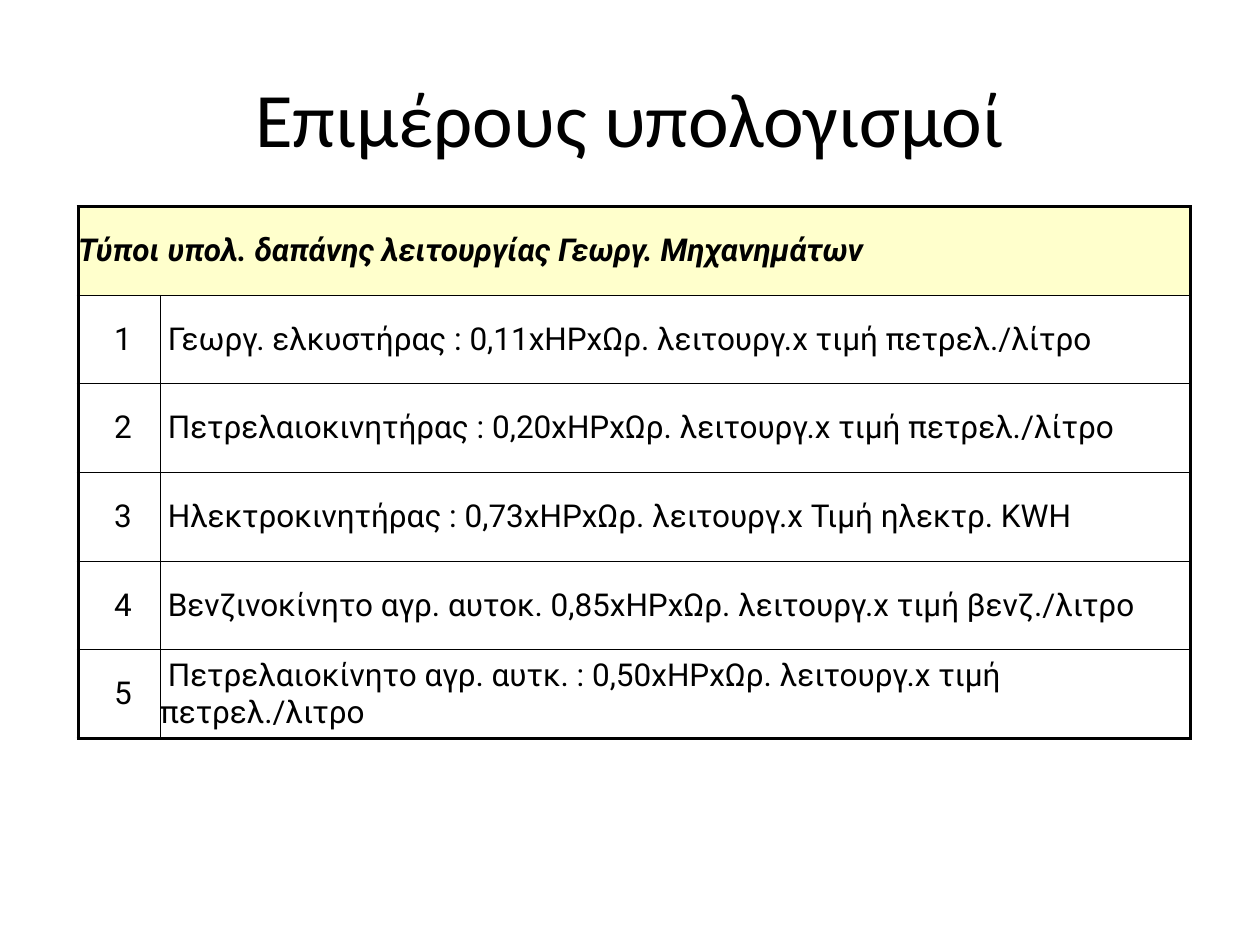
from lxml.etree import SubElement
from pptx import Presentation
from pptx.dml.color import RGBColor
from pptx.enum.text import MSO_ANCHOR as ANCHOR, PP_ALIGN as ALIGN
from pptx.oxml.ns import qn
from pptx.util import Inches, Pt

COLORS = {"black": "000000", "header": "FFFFCC"}
THICK, THIN = Pt(2), Pt(0.5)
HEADER = "Τύποι υπολ. δαπάνης λειτουργίας Γεωργ. Μηχανημάτων"
FORMULAS = [
    "Γεωργ. ελκυστήρας : 0,11xHPxΩρ. λειτουργ.x τιμή πετρελ./λίτρο",
    "Πετρελαιοκινητήρας : 0,20xHPxΩρ. λειτουργ.x τιμή πετρελ./λίτρο",
    "Ηλεκτροκινητήρας : 0,73xHPxΩρ. λειτουργ.x Τιμή ηλεκτρ. KWH",
    "Βενζινοκίνητο αγρ. αυτοκ. 0,85xHPxΩρ. λειτουργ.x τιμή βενζ./λιτρο",
    "Πετρελαιοκίνητο αγρ. αυτκ. : 0,50xHPxΩρ. λειτουργ.x τιμή πετρελ./λιτρο",
]


def set_text(p, text, font, size, align, bold=False, italic=False):
    p.text, p.alignment = text, align
    p.font.name, p.font.size = font, Pt(size)
    p.font.bold, p.font.italic = bold, italic
    p.font.color.rgb = RGBColor.from_string(COLORS["black"])


def set_border(cell, side, width):
    ln = SubElement(cell._tc.get_or_add_tcPr(), qn(f"a:ln{side}"), w=str(width))
    fill = SubElement(ln, qn("a:solidFill"))
    SubElement(fill, qn("a:srgbClr"), val=COLORS["black"])


prs = Presentation()
prs.slide_width, prs.slide_height = Inches(10), Inches(7.5)
s = prs.slides.add_slide(prs.slide_layouts[6])

# Title
sp = s.shapes.add_textbox(Inches(0.5), Inches(0.3), Inches(9), Inches(1.25))
tf = sp.text_frame
tf.word_wrap = True
tf.vertical_anchor = ANCHOR.MIDDLE
set_text(tf.paragraphs[0], "Επιμέρους υπολογισμοί", "Calibri", 44, ALIGN.CENTER)

# Table: a merged header above numbered formulas
rows = [(HEADER, "")] + [(f" {n}", f" {text}") for n, text in enumerate(FORMULAS, 1)]
last = len(rows) - 1
table = s.shapes.add_table(len(rows), 2, Inches(0.62), Inches(1.64),
                           Inches(8.83), Inches(4.22)).table
table.columns[0].width = Inches(0.65)
table.columns[1].width = Inches(8.18)
table.cell(0, 0).merge(table.cell(0, 1))

for i, row in enumerate(rows):
    is_header = i == 0
    for j, text in enumerate(row):
        cell = table.cell(i, j)
        cell.margin_left = cell.margin_right = cell.margin_top = cell.margin_bottom = 0
        cell.vertical_anchor = ANCHOR.MIDDLE
        align = ALIGN.CENTER if j == 0 and not is_header else ALIGN.LEFT
        set_text(cell.text_frame.paragraphs[0], text, "Roboto", 18, align,
                 is_header, is_header)

        # Thick outer frame, thin inner lines
        outer = {"L": j == 0, "R": j == 1 or is_header, "T": is_header, "B": i == last}
        for side, on_edge in outer.items():
            set_border(cell, side, THICK if on_edge else THIN)

        if is_header:
            cell.fill.solid()
            cell.fill.fore_color.rgb = RGBColor.from_string(COLORS["header"])
        else:
            cell.fill.background()

prs.save("out.pptx")
